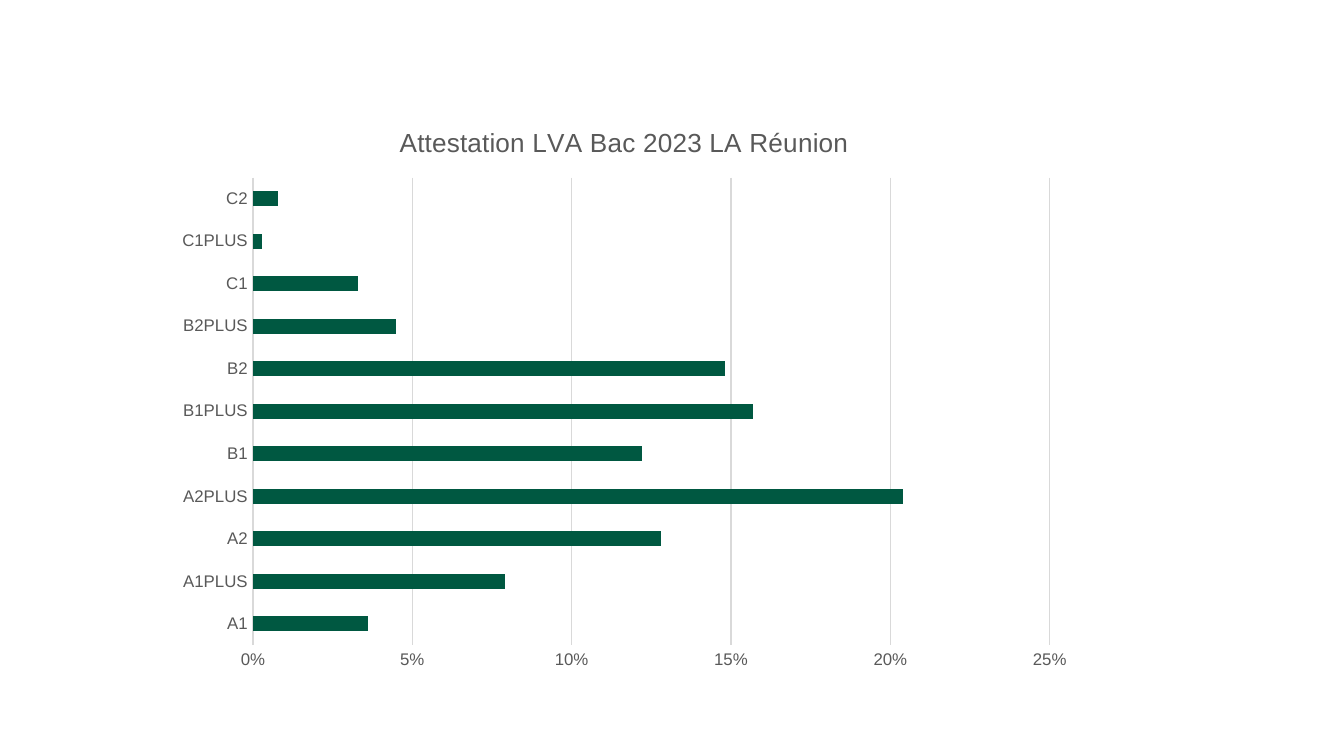
import dataclasses
import pptx
import pptx.chart.data
import pptx.dml.color
import pptx.enum.chart
import pptx.util

PX = 9525


@dataclasses.dataclass(frozen=True)
class Theme:
    face: str = "Arial"
    bar: str = "005841"
    ink: str = "595959"
    dark: str = "000000"
    rule: str = "D9D9D9"
    head: float = 14
    base: float = 10
    tick: float = 9
    line: float = 0.75


THEME = Theme()
LEVELS = {
    "A1": 0.036, "A1PLUS": 0.079, "A2": 0.128, "A2PLUS": 0.204,
    "B1": 0.122, "B1PLUS": 0.157, "B2": 0.148, "B2PLUS": 0.045,
    "C1": 0.033, "C1PLUS": 0.003, "C2": 0.008,
}


def rgb(code):
    return pptx.dml.color.RGBColor.from_string(code)


def style(font, size, color=THEME.ink, bold=False):
    font.name = THEME.face
    font.size = pptx.util.Pt(size)
    font.bold = bold
    font.color.rgb = rgb(color)


def write(frame, text, **look):
    frame.text = text
    style(frame.paragraphs[0].runs[0].font, **look)


def stroke(line):
    line.color.rgb = rgb(THEME.rule)
    line.width = pptx.util.Pt(THEME.line)


def axis(part):
    part.major_tick_mark = pptx.enum.chart.XL_TICK_MARK.NONE
    part.minor_tick_mark = pptx.enum.chart.XL_TICK_MARK.NONE
    style(part.tick_labels.font, THEME.tick)


def graph(slide, box, title, rows):
    data = pptx.chart.data.CategoryChartData(number_format="0%")
    data.categories = list(rows)
    data.add_series("Series 1", list(rows.values()))
    kind = pptx.enum.chart.XL_CHART_TYPE.BAR_CLUSTERED
    left, top, width, height = [n * PX for n in box]
    frame = slide.shapes.add_chart(kind, left, top, width, height, data)
    chart = frame.chart
    style(chart.font, THEME.base, THEME.dark)
    chart.has_legend = False
    chart.has_title = True
    write(chart.chart_title.text_frame, title, size=THEME.head)
    chart.chart_title.include_in_layout = False

    plot = chart.plots[0]
    plot.gap_width = 182
    plot.vary_by_categories = False
    fill = plot.series[0].format.fill
    fill.solid()
    fill.fore_color.rgb = rgb(THEME.bar)

    names, scale = chart.category_axis, chart.value_axis
    axis(names)
    stroke(names.format.line)
    axis(scale)
    scale.minimum_scale, scale.maximum_scale = 0, 0.25
    scale.major_unit = 0.05
    scale.tick_labels.number_format = "0%"
    scale.tick_labels.number_format_is_linked = False
    scale.format.line.fill.background()
    scale.has_major_gridlines = True
    stroke(scale.major_gridlines.format.line)


def main():
    deck = pptx.Presentation()
    deck.slide_width, deck.slide_height = 960 * PX, 540 * PX
    slide = deck.slides.add_slide(deck.slide_layouts[6])
    graph(slide, (117, 73, 658, 414),
          "Attestation LVA Bac 2023 LA Réunion", LEVELS)
    deck.save("out.pptx")


if __name__ == "__main__":
    main()
